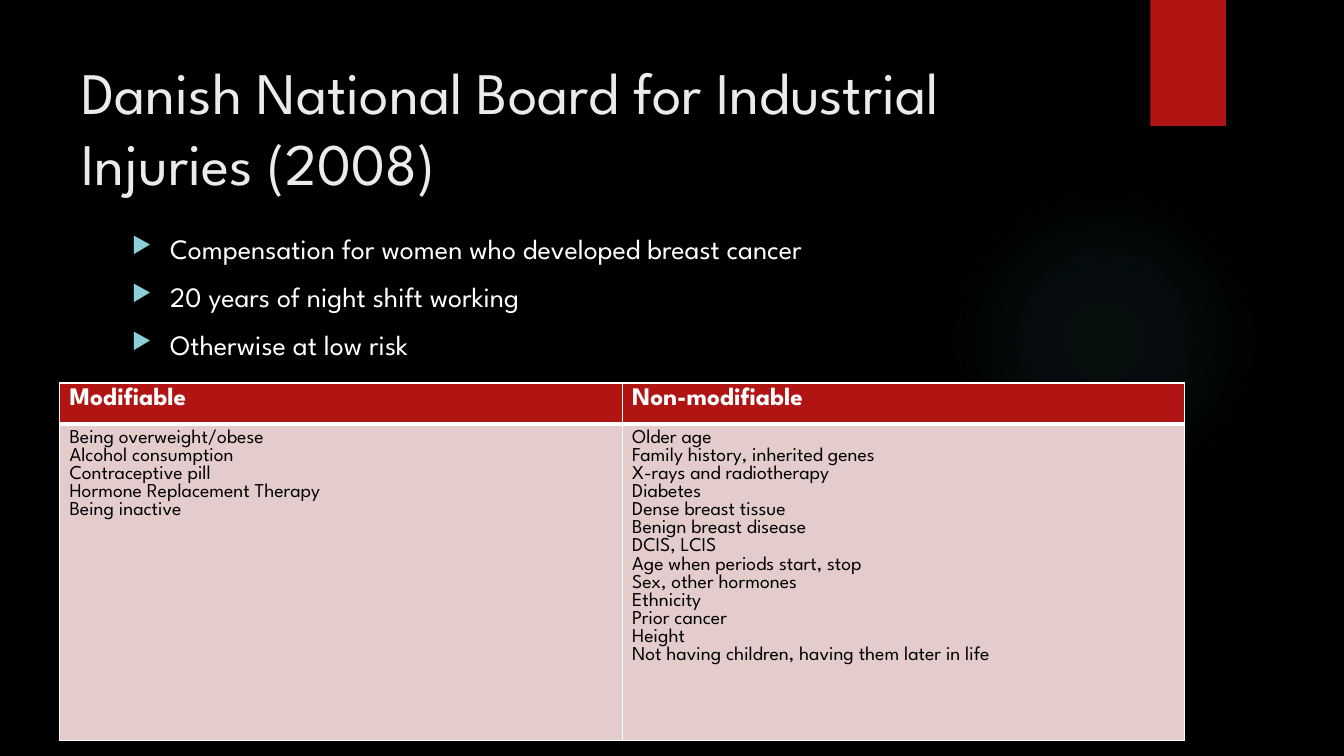
from lxml import etree
from pptx import Presentation
from pptx.dml.color import RGBColor
from pptx.enum.shapes import MSO_SHAPE
from pptx.oxml import parse_xml
from pptx.oxml.ns import nsdecls, qn
from pptx.util import Inches, Pt

FONT = "League Spartan"
BLACK = RGBColor(0, 0, 0)
WHITE = RGBColor(255, 255, 255)
PALE = RGBColor(0xEB, 0xEB, 0xEB)
RED = RGBColor(0xB0, 0x15, 0x13)
PINK = RGBColor(0xE4, 0xCC, 0xCC)
AQUA = RGBColor(0x8A, 0xD0, 0xD6)
TEAL = RGBColor(0x50, 0xB9, 0xC1)

TITLE = "Danish National Board for Industrial Injuries (2008)"
POINTS = [
    "Compensation for women who developed breast cancer",
    "20 years of night shift working",
    "Otherwise at low risk",
]
RISKS = {
    "Modifiable": [
        "Being overweight/obese", "Alcohol consumption", "Contraceptive pill",
        "Hormone Replacement Therapy", "Being inactive",
    ],
    "Non-modifiable": [
        "Older age", "Family history, inherited genes",
        "X-rays and radiotherapy", "Diabetes", "Dense breast tissue",
        "Benign breast disease", "DCIS, LCIS", "Age when periods start, stop",
        "Sex, other hormones", "Ethnicity", "Prior cancer", "Height",
        "Not having children, having them later in life",
    ],
}


def add_plain(slide, kind, left, top, width, height):
    shape = slide.shapes.add_shape(
        kind, Inches(left), Inches(top), Inches(width), Inches(height))
    shape.shadow.inherit = False
    shape.line.fill.background()
    return shape


def add_glow(slide):
    glow = add_plain(slide, MSO_SHAPE.OVAL, 9.41, 1.83, 3.08, 3.08)
    stops = "".join(
        f'<a:gs pos="{pos}000"><a:srgbClr val="{TEAL}">'
        f'<a:alpha val="{alpha}000"/></a:srgbClr></a:gs>'
        for pos, alpha in ((0, 7), (36, 6), (69, 0)))
    grad = parse_xml(
        f'<a:gradFill {nsdecls("a")}><a:gsLst>{stops}</a:gsLst>'
        '<a:path path="circle"><a:fillToRect l="50000" t="50000" '
        'r="50000" b="50000"/></a:path></a:gradFill>')
    glow.element.spPr.find(qn("a:prstGeom")).addnext(grad)


def add_run(para, text, size, color, bold=False):
    run = para.add_run()
    run.text = text
    font = run.font
    font.name, font.size, font.bold = FONT, Pt(size), bold
    font.color.rgb = color


def add_bullet(para):
    props = para._p.get_or_add_pPr()
    props.set("marL", str(Inches(0.38)))
    props.set("indent", str(-Inches(0.38)))
    color = etree.SubElement(props, qn("a:buClr"))
    etree.SubElement(color, qn("a:srgbClr"), val=str(AQUA))
    etree.SubElement(props, qn("a:buSzPct"), val="80000")
    etree.SubElement(props, qn("a:buChar"), char="▶")


def fill_text(frame, lines, size, color, bold=False,
              pitch=None, gap=None, bullet=False):
    for i, line in enumerate(lines):
        para = frame.add_paragraph() if i else frame.paragraphs[0]
        if bullet:
            add_bullet(para)
        if pitch:
            para.line_spacing = Pt(pitch)
        if gap and i:
            para.space_before = Pt(gap)
        add_run(para, line, size, color, bold)


def add_box(slide, left, top, width, height, lines, size, color, **style):
    box = slide.shapes.add_textbox(
        Inches(left), Inches(top), Inches(width), Inches(height))
    box.text_frame.word_wrap = True
    fill_text(box.text_frame, lines, size, color, **style)


def set_cell(cell, lines, size, color, fill, widths, bold=False):
    fill_text(cell.text_frame, lines, size, color, bold)
    props = cell._tc.get_or_add_tcPr()
    for side, width in zip("LRTB", widths):
        line = etree.SubElement(props, qn(f"a:ln{side}"), w=str(Pt(width)))
        solid = etree.SubElement(line, qn("a:solidFill"))
        etree.SubElement(solid, qn("a:srgbClr"), val=str(WHITE))
    cell.fill.solid()
    cell.fill.fore_color.rgb = fill


def add_risks(slide):
    table = slide.shapes.add_table(
        2, len(RISKS), Inches(0.59), Inches(3.8),
        Inches(11.16), Inches(2.84)).table
    table.rows[0].height = Inches(0.41)
    table.rows[1].height = Inches(2.43)
    for col, (head, items) in enumerate(RISKS.items()):
        table.columns[col].width = Inches(5.58)
        set_cell(table.cell(0, col), [head], 18, WHITE, RED,
                 (1, 1, 1, 3), bold=True)
        set_cell(table.cell(1, col), items, 14, BLACK, PINK, (1, 1, 3, 1))


def main():
    prs = Presentation()
    prs.slide_width, prs.slide_height = Inches(13.33), Inches(7.5)
    slide = prs.slides.add_slide(prs.slide_layouts[6])

    # Backdrop
    back = slide.background.fill
    back.solid()
    back.fore_color.rgb = BLACK
    add_glow(slide)
    flag = add_plain(slide, MSO_SHAPE.RECTANGLE, 11.41, 0, 0.75, 1.25)
    flag.fill.solid()
    flag.fill.fore_color.rgb = RED

    # Title and key points
    add_box(slide, 0.71, 0.5, 10.29, 1.53, [TITLE], 42, PALE, pitch=50.5)
    add_box(slide, 1.21, 2.25, 9.78, 4.59, POINTS, 20, WHITE,
            pitch=24, gap=10, bullet=True)

    # Risk factor table
    add_risks(slide)
    prs.save("out.pptx")


if __name__ == "__main__":
    main()
